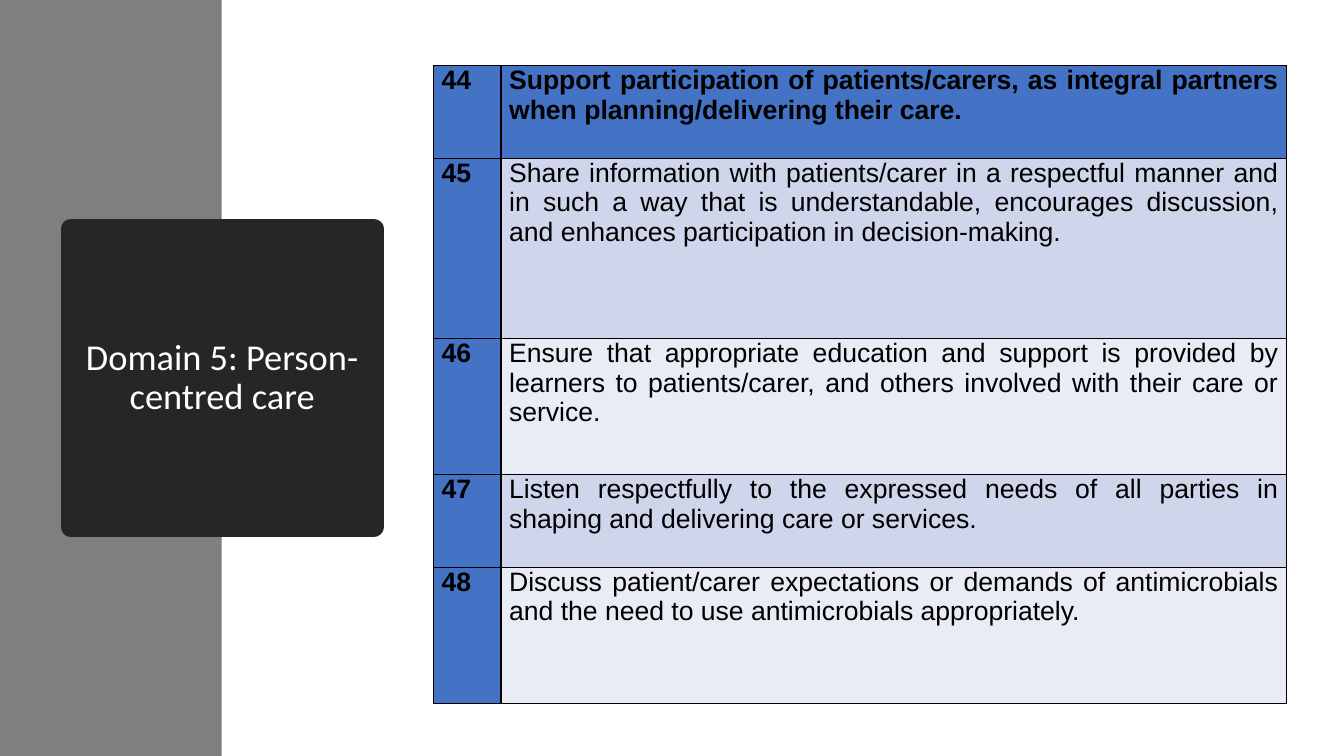
from lxml import etree
from pptx import Presentation
from pptx.dml.color import RGBColor
from pptx.enum.shapes import MSO_SHAPE
from pptx.enum.text import MSO_ANCHOR, PP_ALIGN
from pptx.oxml.ns import qn
from pptx.util import Inches, Pt

RECTANGLE = MSO_SHAPE.RECTANGLE
MIDDLE = MSO_ANCHOR.MIDDLE
CENTER, JUSTIFY = PP_ALIGN.CENTER, PP_ALIGN.JUSTIFY

COMPETENCIES = [
    ("44", "Support participation of patients/carers, as integral partners "
           "when planning/delivering their care."),
    ("45", "Share information with patients/carer in a respectful manner and in such "
           "a way that is understandable, encourages discussion, and enhances "
           "participation in decision-making."),
    ("46", "Ensure that appropriate education and support is provided by learners to "
           "patients/carer, and others involved with their care or service."),
    ("47", "Listen respectfully to the expressed needs of all parties in shaping and "
           "delivering care or services."),
    ("48", "Discuss patient/carer expectations or demands of antimicrobials and the "
           "need to use antimicrobials appropriately."),
]


def color(hex_string):
    return RGBColor.from_string(hex_string)


def grid(units):
    """Length of a number of grid units; the slide is 40 columns by 22.5 rows."""
    return Inches(units / 3)


class SlideBuilder:
    BLACK, WHITE = "000000", "FFFFFF"
    GRAY, CHARCOAL = "7F7F7F", "262626"
    ACCENT, BANDS = "4472C4", ("E9EBF5", "CFD5EA")
    TITLE_FONT, TABLE_FONT = "Calibri", "Arial"

    def __init__(self, slide):
        self.slide = slide

    def panel(self, left, top, width, height, fill):
        box = self.slide.shapes.add_shape(RECTANGLE, *map(grid, (left, top, width, height)))
        box.shadow.inherit = False
        box.fill.solid()
        box.fill.fore_color.rgb = color(fill)
        box.line.fill.background()
        return box

    def title_box(self, left, top, width, height, text):
        """Dark panel whose thick outline gives it rounded corners."""
        box = self.panel(left, top, width, height, self.CHARCOAL)
        box.line.color.rgb = color(self.CHARCOAL)
        box.line.width = Pt(13.75)
        outline = box.line.fill._xPr
        etree.SubElement(outline, qn("a:round"))
        frame = box.text_frame
        frame.word_wrap = True
        frame.vertical_anchor = MIDDLE
        self.set_text(frame, text, self.TITLE_FONT, 26, self.WHITE, CENTER)
        frame.paragraphs[0].line_spacing = 0.9

    def set_text(self, frame, text, font, size, text_color, alignment, bold=False):
        paragraph = frame.paragraphs[0]
        paragraph.text = text
        paragraph.alignment = alignment
        paragraph.font.name = font
        paragraph.font.size = Pt(size)
        paragraph.font.bold = bold
        paragraph.font.color.rgb = color(text_color)

    def outline_cell(self, cell):
        properties = cell._tc.get_or_add_tcPr()
        for side in ("lnL", "lnR", "lnT", "lnB"):
            line = etree.SubElement(properties, qn(f"a:{side}"), w=str(Pt(1)))
            fill = etree.SubElement(line, qn("a:solidFill"))
            etree.SubElement(fill, qn("a:srgbClr"), val=self.BLACK)

    def table(self, left, top, widths, heights, rows):
        """Table with an accented first row and column and banded body cells."""
        lengths = map(grid, (left, top, sum(widths), sum(heights)))
        table = self.slide.shapes.add_table(len(rows), len(widths), *lengths).table
        table.first_row = table.horz_banding = False
        for column, width in zip(table.columns, widths):
            column.width = grid(width)
        for row, height in zip(table.rows, heights):
            row.height = grid(height)
        for row_index, texts in enumerate(rows):
            for column_index, text in enumerate(texts):
                cell = table.cell(row_index, column_index)
                header = row_index == 0 or column_index == 0
                self.outline_cell(cell)
                cell.fill.solid()
                cell.fill.fore_color.rgb = color(
                    self.ACCENT if header else self.BANDS[row_index % 2])
                cell.margin_left = cell.margin_right = Inches(0.08)
                cell.margin_top = cell.margin_bottom = 0
                self.set_text(cell.text_frame, text, self.TABLE_FONT, 19,
                              self.BLACK, JUSTIFY, bold=header)


def main():
    deck = Presentation()
    deck.slide_width, deck.slide_height = Inches(13.33), Inches(7.5)
    page = SlideBuilder(deck.slides.add_slide(deck.slide_layouts[6]))
    page.panel(0, 0, 6.6, 22.5, page.GRAY)
    page.title_box(2.1, 6.81, 9.03, 8.88, "Domain 5: Person-centred care")
    page.table(12.9, 1.95, widths=(2.01, 23.37),
               heights=(2.76, 5.37, 4.05, 2.76, 4.05), rows=COMPETENCIES)
    deck.save("out.pptx")


if __name__ == "__main__":
    main()
